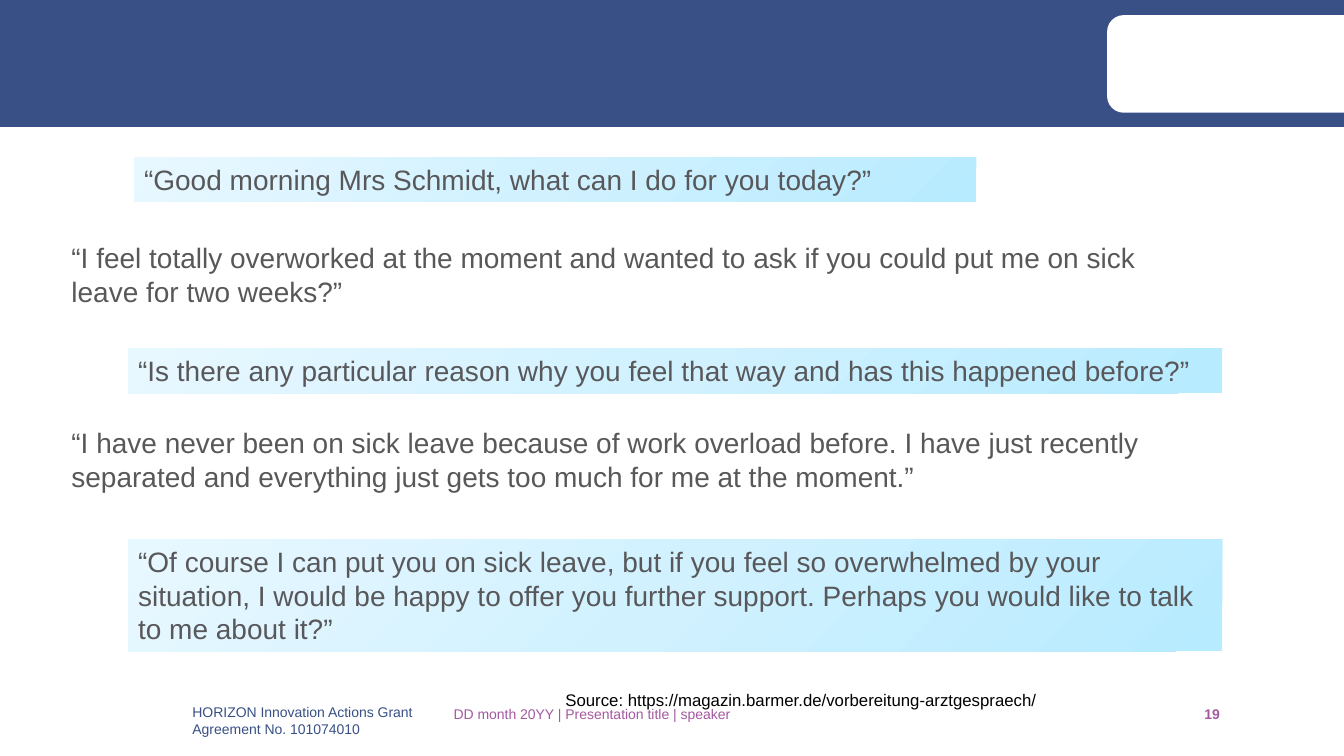
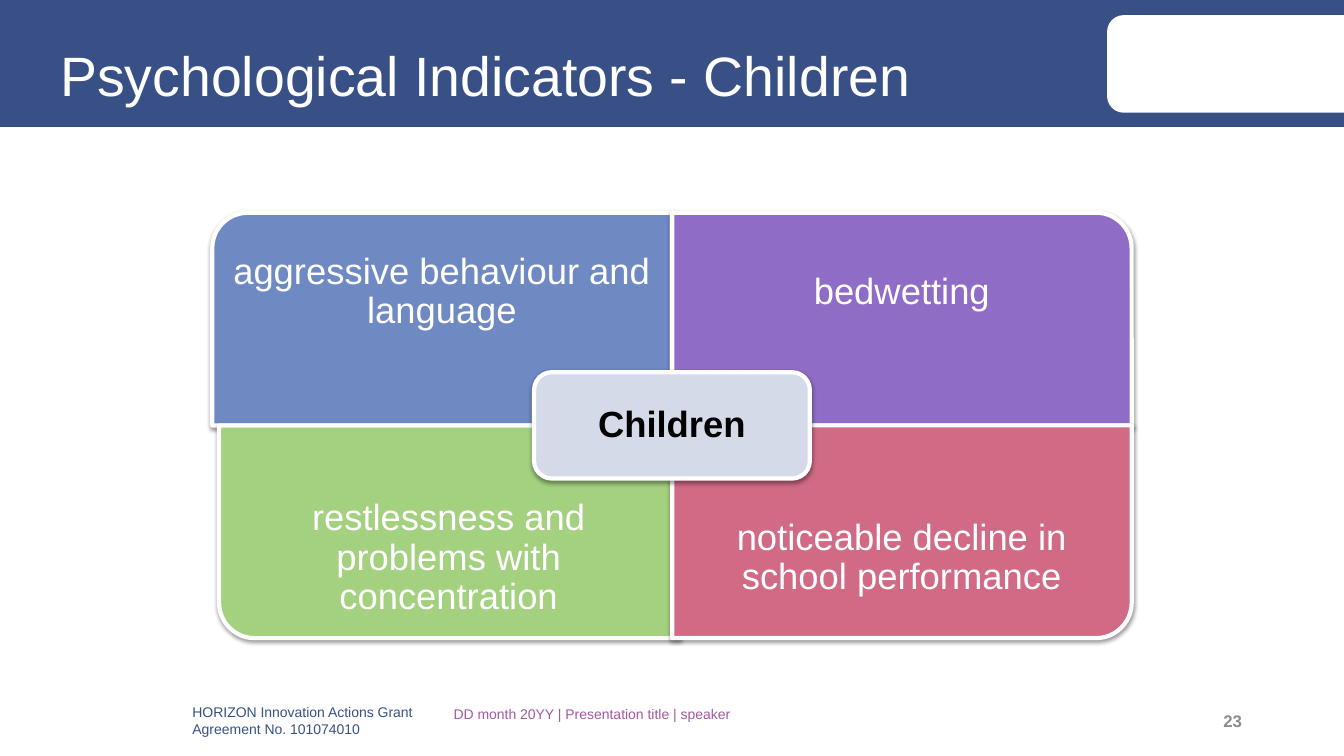
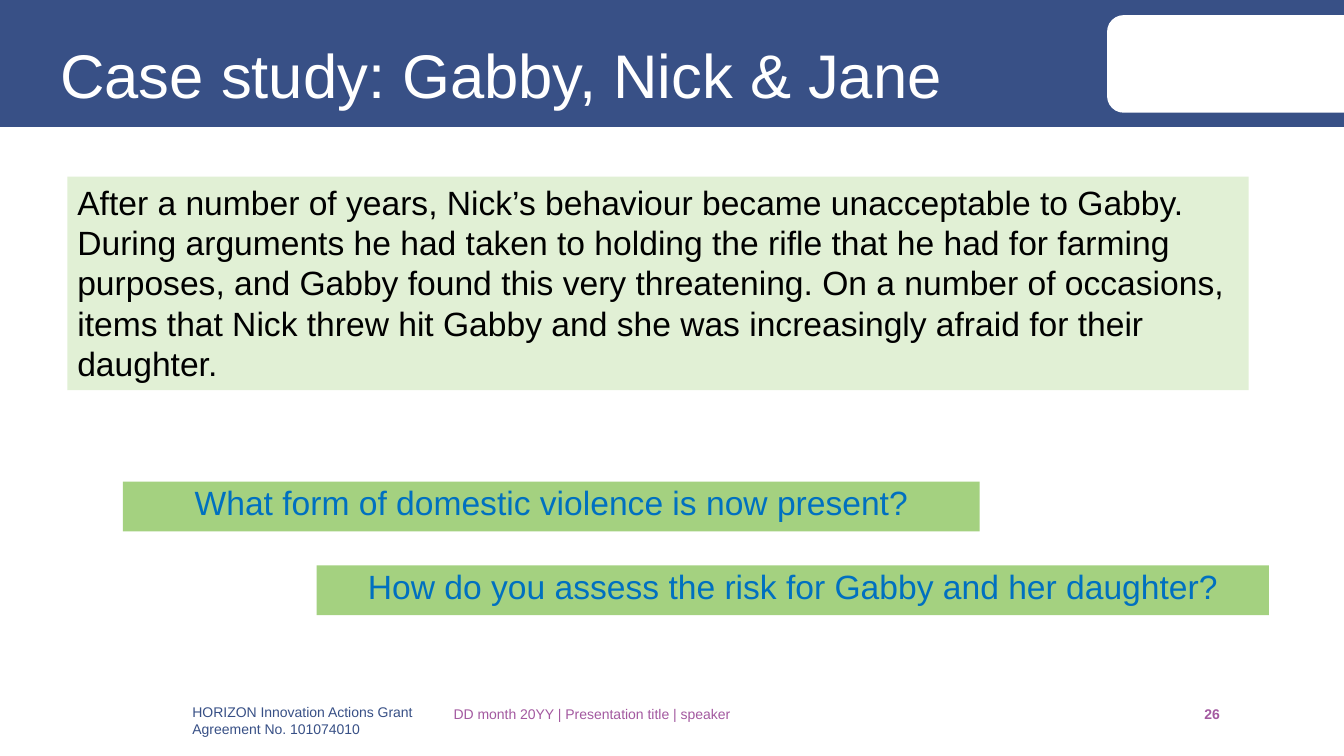
from copy import deepcopy

from lxml.etree import SubElement
from pptx import Presentation
from pptx.dml.color import RGBColor
from pptx.enum.shapes import MSO_SHAPE as Kind
from pptx.enum.text import MSO_ANCHOR as Anchor, PP_ALIGN as Align
from pptx.oxml.ns import qn
from pptx.util import Cm, Pt

FONT = "Arial"
WHITE, BLACK, BLUE, PLUM = "FFFFFF", "000000", "385086", "A359A0"
GREY, PALE, GREEN, LINK = "58585A", "E1F0D5", "A4D180", "0070C0"
SKY = ((0, "B7EBFF"), (0.5, "D1F1FF"), (1, "E8F8FF"))

WIDTH, HEIGHT = 33.87, 19.05
FOOT, LINE = 17.65, 1.02  # top and height of the footer row, in cm
GRANT = "HORIZON Innovation Actions Grant Agreement No. 101074010"
DATE = "DD month 20YY | Presentation title | speaker"
SOURCE = "Source: https://magazin.barmer.de/vorbereitung-arztgespraech/"

# Who speaks, box in cm, words
TALK = [
    ("doctor", (3.38, 3.96, 21.23, 1.12),
     "“Good morning Mrs Schmidt, what can I do for you today?”"),
    ("patient", (1.55, 5.94, 28.85, 1.96),
     "“I feel totally overworked at the moment and wanted to ask if you could "
     "put me on sick leave for two weeks?”"),
    ("doctor", (3.23, 8.79, 27.58, 1.12),
     "“Is there any particular reason why you feel that way and has this "
     "happened before?”"),
    ("patient", (1.55, 10.59, 28.85, 1.96),
     "“I have never been on sick leave because of work overload before. I have "
     "just recently separated and everything just gets too much for me at the "
     "moment.”"),
    ("doctor", (3.23, 13.59, 27.58, 2.82),
     "“Of course I can put you on sick leave, but if you feel so overwhelmed by "
     "your situation, I would be happy to offer you further support. Perhaps "
     "you would like to talk to me about it?”"),
]

# Words, fill, left in cm, row, turn of the round corner
SIGNS = [
    ("aggressive behaviour and language", "6F89C3", 5.35, 0, 270),
    ("bedwetting", "8F6DC7", 16.94, 0, 0),
    ("restlessness and problems with concentration", GREEN, 5.52, 1, 180),
    ("noticeable decline in school performance", "D06A85", 16.94, 1, 90),
]

STORY = (
    "After a number of years, Nick’s behaviour became unacceptable to Gabby. "
    "During arguments he had taken to holding the rifle that he had for farming "
    "purposes, and Gabby found this very threatening. On a number of occasions, "
    "items that Nick threw hit Gabby and she was increasingly afraid for their "
    "daughter."
)
ASKS = [
    ("What form of domestic violence is now present?", (3.1, 12.14, 21.59, 1.25)),
    ("How do you assess the risk for Gabby and her daughter?",
     (7.98, 14.25, 24, 1.25)),
]


def rgb(code):
    return RGBColor.from_string(code)


def paint(shape, fill):
    """Fill with one colour, or with a list of gradient stops."""
    if isinstance(fill, str):
        shape.fill.solid()
        shape.fill.fore_color.rgb = rgb(fill)
        return
    shape.fill.gradient()
    shape.fill.gradient_angle = 135
    stops = shape.fill._xPr.find(".//" + qn("a:gsLst"))
    stops.insert(1, deepcopy(stops[0]))
    for stop, (pos, code) in zip(shape.fill.gradient_stops, fill):
        stop.position = pos
        stop.color.rgb = rgb(code)


def shade(shape):
    """Add a soft shadow below the shape."""
    glow = SubElement(shape._element.spPr.find(qn("a:effectLst")),
                      qn("a:outerShdw"), blurRad="40000", dist="20000",
                      dir="5400000", rotWithShape="0")
    tint = SubElement(glow, qn("a:srgbClr"), val=BLACK)
    SubElement(tint, qn("a:alpha"), val="38000")


def draw(slide, kind, box, fill, edge=None, turn=0):
    """Add a shape that covers box (cm) once it is turned."""
    left, top, wide, high = box
    if turn % 180:
        left, top = left + (wide - high) / 2, top + (high - wide) / 2
        wide, high = high, wide
    shape = slide.shapes.add_shape(kind, Cm(left), Cm(top), Cm(wide), Cm(high))
    shape.rotation = turn
    shape.shadow.inherit = False
    paint(shape, fill)
    if edge:
        shape.line.color.rgb = rgb(edge)
        shape.line.width = Pt(3)
        shade(shape)
    else:
        shape.line.fill.background()
    return shape


def write(slide, text, box, size=20, color=GREY, bold=False, align=Align.LEFT,
          anchor=Anchor.TOP, lead=1, pad=(0.25, 0.13), shape=None):
    """Write in the given shape, or in a new text box."""
    shape = shape or slide.shapes.add_textbox(*map(Cm, box))
    frame = shape.text_frame
    frame.word_wrap = True
    frame.vertical_anchor = anchor
    frame.margin_left = frame.margin_right = Cm(pad[0])
    frame.margin_top = frame.margin_bottom = Cm(pad[1])
    para = frame.paragraphs[0]
    para.alignment, para.line_spacing = align, lead
    run = para.add_run()
    run.text = text
    font = run.font
    font.name, font.size, font.bold = FONT, Pt(size), bold
    font.color.rgb = rgb(color)


def panel(slide, text, box, fill, **form):
    write(slide, text, box, shape=draw(slide, Kind.RECTANGLE, box, fill), **form)


def start(deck, title="", size=44):
    """Add a slide with band, white tab, title and footer."""
    slide = deck.slides.add_slide(deck.slide_layouts[6])
    draw(slide, Kind.RECTANGLE, (0, 0, WIDTH, 3.2), BLUE)
    tab = draw(slide, Kind.ROUND_2_SAME_RECTANGLE, (27.9, 0.38, 5.97, 2.46),
               WHITE, turn=270)
    tab.adjustments[0] = 0.17
    if title:
        write(slide, title, (1.27, 0.99, 24.03, 1.98), size=size, color=WHITE,
              anchor=Anchor.MIDDLE, lead=0.9)
    write(slide, GRANT, (4.6, FOOT, 6.58, LINE), size=10, color=BLUE,
          anchor=Anchor.MIDDLE)
    write(slide, DATE, (11.18, FOOT, 18.39, LINE), size=10, color=PLUM)
    return slide


def number(slide, text, left=29.85, wide=1.14, size=10, color=PLUM, **form):
    write(slide, text, (left, FOOT, wide, LINE), size=size, color=color,
          bold=True, align=Align.RIGHT, **form)


def talk(deck):
    slide = start(deck)
    number(slide, "19")
    write(slide, SOURCE, (14, 17.32, 14.1, 0.74), size=12, color=BLACK, lead=0.9)
    for who, box, text in TALK:
        if who == "doctor":
            panel(slide, text, box, SKY)
        else:
            write(slide, text, box)


def signs(deck):
    slide = start(deck, "Psychological Indicators - Children", 39.6)
    top, wide, high, part = 5.36, 11.58, 5.36, 4.02
    form = dict(size=26, align=Align.CENTER, anchor=Anchor.MIDDLE, lead=0.9)
    for text, fill, left, row, turn in SIGNS:
        y = top + row * high
        draw(slide, Kind.ROUND_1_RECTANGLE, (left, y, wide, high), fill, WHITE, turn)
        write(slide, text, (left, y + row * (high - part), wide, part),
              color=WHITE, pad=(0.51, 0.51), **form)
    hub = (13.46, 9.38, 6.95, 2.68)
    write(slide, "Children", hub, color=BLACK, bold=True, pad=(0.41, 0.41),
          shape=draw(slide, Kind.ROUNDED_RECTANGLE, hub, "D5DAE9", WHITE), **form)
    number(slide, "23", 23.93, 7.62, 12, "8C8C8C", anchor=Anchor.MIDDLE)


def case(deck):
    slide = start(deck, "Case study: Gabby, Nick & Jane")
    number(slide, "26")
    panel(slide, STORY, (1.7, 4.45, 29.77, 5.38), PALE, size=24, color=BLACK)
    for text, box in ASKS:
        panel(slide, text, box, GREEN, size=24, color=LINK, align=Align.CENTER,
              lead=0.9)


def main():
    deck = Presentation()
    deck.slide_width, deck.slide_height = Cm(WIDTH), Cm(HEIGHT)
    for build in (talk, signs, case):
        build(deck)
    deck.save("out.pptx")


if __name__ == "__main__":
    main()
